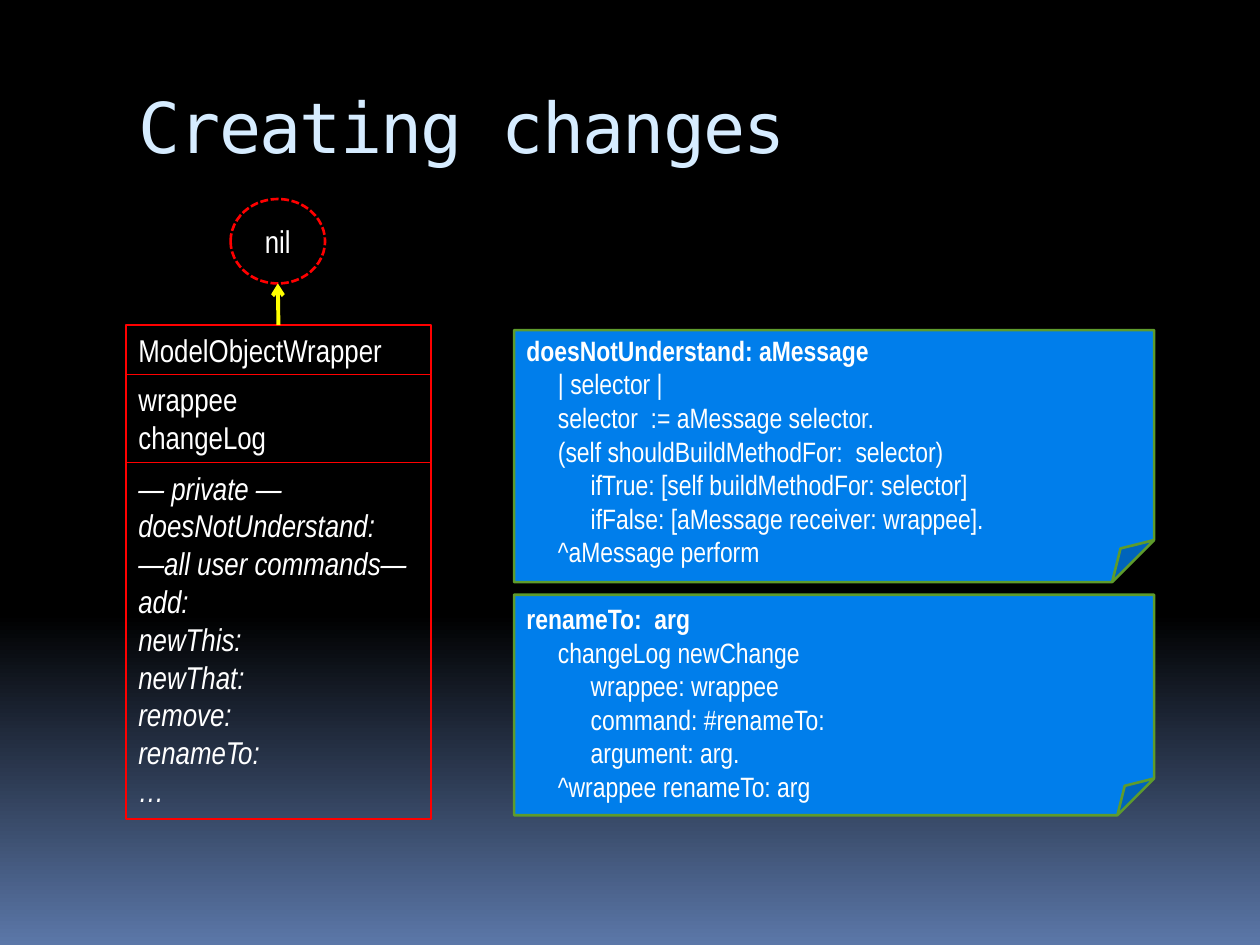
import pptx
import pptx.util
import pptx.dml.color
import pptx.enum.dml
import pptx.enum.shapes
import pptx.enum.text
import pptx.oxml.ns
import lxml.etree

Inches = pptx.util.Inches
Pt = pptx.util.Pt
SHAPES = pptx.enum.shapes.MSO_SHAPE
ANCHOR = pptx.enum.text.MSO_ANCHOR
ALIGN = pptx.enum.text.PP_ALIGN

BODY_FONT = "Arial Narrow"
RED, WHITE = "FF0000", "FFFFFF"
TAB_STOPS = (0.25, 0.51, 0.75, 1)


def color(hex_string):
    return pptx.dml.color.RGBColor.from_string(hex_string)


def add_xml(parent, tag, **attributes):
    return lxml.etree.SubElement(parent, pptx.oxml.ns.qn(tag), **attributes)


def format_run(run, size, font=BODY_FONT, hex_string=WHITE, bold=False, italic=False):
    run.font.size = Pt(size)
    run.font.name = font
    run.font.color.rgb = color(hex_string)
    run.font.bold = bold
    run.font.italic = italic


def add_outlined_shape(slide, kind, box, line_color, line_width, fill=None):
    shape = slide.shapes.add_shape(kind, *map(Inches, box))
    shape.shadow.inherit = False
    if fill:
        shape.fill.solid()
        shape.fill.fore_color.rgb = color(fill)
    else:
        shape.fill.background()
    shape.line.color.rgb = color(line_color)
    shape.line.width = Pt(line_width)
    return shape


def set_text(shape, lines, size, anchor=ANCHOR.TOP, align=ALIGN.LEFT, italic=False):
    frame = shape.text_frame
    frame.word_wrap = True
    frame.vertical_anchor = anchor
    frame.text = "\n".join(lines)
    for paragraph in frame.paragraphs:
        paragraph.alignment = align
        for run in paragraph.runs:
            format_run(run, size, italic=italic)
    return frame


def set_background(slide):
    fill = slide.background.fill
    fill.gradient()
    fill.gradient_angle = 270
    for stop, position, hex_string in zip(fill.gradient_stops, (0.65, 1), ("000000", "5B77A8")):
        stop.position = position
        stop.color.rgb = color(hex_string)


def add_title(slide, box, text):
    frame = slide.shapes.add_textbox(*map(Inches, box)).text_frame
    frame.word_wrap = True
    frame.margin_top = Inches(0.1)
    frame.text = text
    run = frame.paragraphs[0].runs[0]
    format_run(run, 40, "DejaVu Sans Mono", "D6ECFF")
    run.font._element.set("spc", "-100")


def add_class_box(slide, box, sections):
    """Stack the sections; each is (height, lines, italic). Return the top one."""
    left, top, width = box
    shapes = []
    for height, lines, italic in sections:
        shape = add_outlined_shape(slide, SHAPES.RECTANGLE, (left, top, width, height), RED, 0.75)
        frame = set_text(shape, lines, 18, italic=italic)
        frame.auto_size = pptx.enum.text.MSO_AUTO_SIZE.SHAPE_TO_FIT_TEXT
        shapes.append(shape)
        top += height
    return shapes[0]


def add_nil_reference(slide, box, class_shape):
    # Dashed circle
    circle = add_outlined_shape(slide, SHAPES.OVAL, box, RED, 1.5)
    circle.line.dash_style = pptx.enum.dml.MSO_LINE.SQUARE_DOT
    frame = set_text(circle, ["nil"], 18, ANCHOR.MIDDLE, ALIGN.CENTER)
    frame.margin_left = frame.margin_right = 0

    # Arrow from the class box, with its head at the circle
    center = circle.left + circle.width // 2
    arrow = slide.shapes.add_connector(
        pptx.enum.shapes.MSO_CONNECTOR.STRAIGHT,
        center, circle.top + circle.height, center, class_shape.top)
    arrow.end_connect(class_shape, 0)
    arrow.line.color.rgb = color("FFFF00")
    arrow.line.width = Pt(2.25)
    add_xml(arrow.line._get_or_add_ln(), "a:headEnd", type="arrow")
    add_xml(arrow._element.spPr, "a:effectLst")


def add_code_note(slide, box, lines):
    note = add_outlined_shape(slide, SHAPES.FOLDED_CORNER, box, "5E9B2C", 1.5, "007EEB")
    frame = set_text(note, lines, 16, ANCHOR.MIDDLE)
    frame.margin_top = Inches(0.3)
    frame.margin_right = 0
    frame.paragraphs[0].runs[0].font.bold = True
    for paragraph in frame.paragraphs:
        tab_list = add_xml(paragraph._element.get_or_add_pPr(), "a:tabLst")
        for stop in TAB_STOPS:
            add_xml(tab_list, "a:tab", pos=str(Inches(stop)), algn="l")


def main():
    presentation = pptx.Presentation()
    presentation.slide_width = Inches(10)
    presentation.slide_height = Inches(7.5)
    slide = presentation.slides.add_slide(presentation.slide_layouts[6])
    set_background(slide)
    add_title(slide, (1, 0.56, 8.5, 1), "Creating changes")

    # Class diagram
    class_shape = add_class_box(slide, (1, 2.58, 2.42), [
        (0.39, ["ModelObjectWrapper"], False),
        (0.7, ["wrappee", "changeLog"], False),
        (2.83, ["― private ―", "doesNotUnderstand:", "―all user commands―", "add:",
                "newThis:", "newThat:", "remove:", "renameTo:", "…"], True),
    ])
    add_nil_reference(slide, (1.83, 1.58, 0.75, 0.67), class_shape)

    # Method source
    add_code_note(slide, (4.08, 2.62, 5.08, 2), [
        "doesNotUnderstand: aMessage",
        "\t| selector |",
        "\tselector  := aMessage selector.",
        "\t(self shouldBuildMethodFor:  selector)",
        "\t\tifTrue: [self buildMethodFor: selector]",
        "\t\tifFalse: [aMessage receiver: wrappee].",
        "\t^aMessage perform",
    ])
    add_code_note(slide, (4.08, 4.72, 5.08, 1.75), [
        "renameTo:  arg",
        "\tchangeLog newChange",
        "\t\twrappee: wrappee",
        "\t\tcommand: #renameTo:",
        "\t\targument: arg.",
        "\t^wrappee renameTo: arg",
    ])
    presentation.save("out.pptx")


if __name__ == "__main__":
    main()
